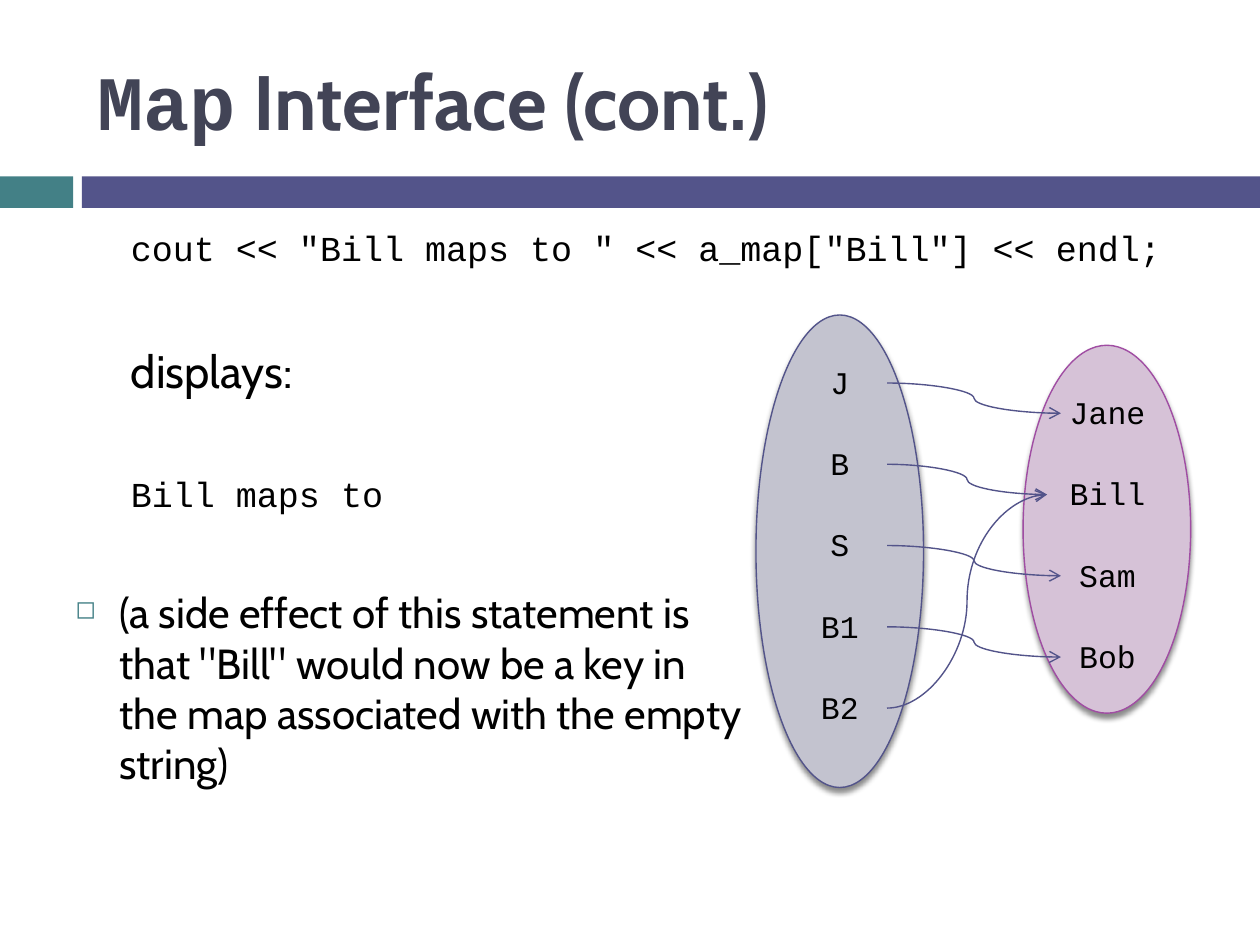
from dataclasses import dataclass

from lxml.etree import SubElement
from pptx import Presentation
from pptx.dml.color import RGBColor
from pptx.enum.shapes import MSO_CONNECTOR, MSO_SHAPE
from pptx.enum.text import MSO_ANCHOR, PP_ALIGN
from pptx.oxml.ns import qn
from pptx.util import Inches, Pt

COLORS = {
    "teal": "438086",
    "indigo": "53548A",
    "title": "424456",
    "text": "000000",
    "key_fill": "C3C3CF",
    "value_fill": "D6C2D7",
    "value_line": "A04DA3",
}
CODE_FONT, PROSE_FONT = "Courier New", "Cabin"
LINE_WIDTH = Pt(0.79)
ROW_STEP = 0.645


@dataclass(frozen=True)
class BodyLine:
    text: str
    font: str
    size: float
    space_before: float
    margin: float = 0.44
    bulleted: bool = False


@dataclass(frozen=True)
class MapSet:
    """An ellipse and the labels listed down its middle."""
    box: tuple[float, float, float, float]
    fill: str
    line: str
    center: float
    first_middle: float
    labels: dict[str, float]  # label: text box width


BODY_LINES = [
    BodyLine('cout << "Bill maps to " << a_map["Bill"] << endl;', CODE_FONT, 20, 5.5),
    BodyLine("displays:", PROSE_FONT, 26, 42.5),
    BodyLine("Bill maps to", CODE_FONT, 20, 42.5),
    BodyLine(
        "(a side effect of this statement is \n"
        'that "Bill" would now be a key in \n'
        "the map associated with the empty \n"
        "string)",
        PROSE_FONT, 24, 41.5, 0.35, True,
    ),
]
KEYS = MapSet((6, 2.5, 1.33, 3.75), "key_fill", "indigo", 6.665, 3.04,
              dict.fromkeys(["J", "B", "S", "B1", "B2"], 0.75))
VALUES = MapSet((8.12, 2.74, 1.33, 2.92), "value_fill", "value_line", 8.79, 3.28,
                {"Jane": 1.04, "Bill": 0.96, "Sam": 0.75, "Bob": 0.75})
# Key, value, and where the arrow starts and ends
ARROWS = [("J", "Jane"), ("B", "Bill"), ("S", "Sam"), ("B1", "Bob"), ("B2", "Bill")]
ARROW_START = 7.04
ARROW_ENDS = {"Jane": 8.42, "Bill": 8.31, "Sam": 8.42, "Bob": 8.42}


def rgb(name: str) -> RGBColor:
    return RGBColor.from_string(COLORS[name])


def style_font(font, name: str, size: float, color: str = "text") -> None:
    font.name, font.size = name, Pt(size)
    font.color.rgb = rgb(color)


def add_filled_shape(shapes, kind, box, fill: str, line: str | None = None):
    shape = shapes.add_shape(kind, *map(Inches, box))
    shape.shadow.inherit = False
    shape.fill.solid()
    shape.fill.fore_color.rgb = rgb(fill)
    if line:
        shape.line.color.rgb = rgb(line)
        shape.line.width = LINE_WIDTH
    else:
        shape.line.fill.background()
    return shape


def add_drop_shadow(shape) -> None:
    effects = shape._element.spPr.find(qn("a:effectLst"))
    shadow = SubElement(effects, qn("a:outerShdw"), blurRad=str(Pt(3)),
                        dist=str(Pt(2.4)), dir="5400000", rotWithShape="0")
    color = SubElement(shadow, qn("a:srgbClr"), val="000000")
    SubElement(color, qn("a:alpha"), val="45000")


def add_title(slide) -> None:
    title = slide.shapes.title
    title.left, title.top, title.width, title.height = map(Inches, (0.67, 0.25, 8.92, 1.08))
    frame = title.text_frame
    frame.vertical_anchor = MSO_ANCHOR.MIDDLE
    paragraph = frame.paragraphs[0]
    paragraph.alignment = PP_ALIGN.LEFT
    for text, font in (("Map", CODE_FONT), (" Interface (cont.)", PROSE_FONT)):
        run = paragraph.add_run()
        run.text = text
        style_font(run.font, font, 44, "title")
        run.font.bold = True


def add_bullet(paragraph, indent: float) -> None:
    properties = paragraph._p.get_or_add_pPr()
    properties.set("indent", str(-Inches(indent)))
    color = SubElement(properties, qn("a:buClr"))
    SubElement(color, qn("a:srgbClr"), val=COLORS["teal"])
    SubElement(properties, qn("a:buSzPct"), val="60000")
    SubElement(properties, qn("a:buChar"), char="◻")


def add_body(slide, lines: list[BodyLine]) -> None:
    frame = slide.shapes.add_textbox(*map(Inches, (0.5, 1.75, 9.33, 5.25))).text_frame
    frame.word_wrap = True
    for index, line in enumerate(lines):
        paragraph = frame.add_paragraph() if index else frame.paragraphs[0]
        paragraph.text = line.text
        paragraph.space_before = Pt(line.space_before)
        style_font(paragraph.font, line.font, line.size)
        paragraph._p.get_or_add_pPr().set("marL", str(Inches(line.margin)))
        if line.bulleted:
            add_bullet(paragraph, line.margin)


def add_map_set(shapes, map_set: MapSet) -> dict[str, float]:
    """Draw the set and return the middle height of each label."""
    ellipse = add_filled_shape(shapes, MSO_SHAPE.OVAL, map_set.box, map_set.fill, map_set.line)
    add_drop_shadow(ellipse)
    middles = {}
    for row, (label, width) in enumerate(map_set.labels.items()):
        middle = map_set.first_middle + row * ROW_STEP
        box = (map_set.center - width / 2, middle - 0.21, width, 0.42)
        frame = shapes.add_textbox(*map(Inches, box)).text_frame
        frame.word_wrap = True
        paragraph = frame.paragraphs[0]
        paragraph.text = label
        paragraph.alignment = PP_ALIGN.CENTER
        style_font(paragraph.font, CODE_FONT, 18)
        middles[label] = middle
    return middles


def add_curved_arrow(slide, start: tuple[float, float], end: tuple[float, float]) -> None:
    arrow = slide.shapes.add_connector(MSO_CONNECTOR.CURVE, *map(Inches, start + end))
    arrow.line.color.rgb = rgb("indigo")
    arrow.line.width = LINE_WIDTH
    SubElement(arrow.line._get_or_add_ln(), qn("a:tailEnd"), type="arrow")
    SubElement(arrow._element.spPr, qn("a:effectLst"))


def main() -> None:
    presentation = Presentation()
    presentation.slide_width, presentation.slide_height = Inches(10), Inches(7.5)
    slide = presentation.slides.add_slide(presentation.slide_layouts[5])

    add_filled_shape(slide.shapes, MSO_SHAPE.RECTANGLE, (0, 1.4, 0.58, 0.25), "teal")
    add_filled_shape(slide.shapes, MSO_SHAPE.RECTANGLE, (0.65, 1.4, 9.35, 0.25), "indigo")
    add_title(slide)
    add_body(slide, BODY_LINES)

    key_middles = add_map_set(slide.shapes, KEYS)
    value_middles = add_map_set(slide.shapes.add_group_shape().shapes, VALUES)
    for key, value in ARROWS:
        add_curved_arrow(slide, (ARROW_START, key_middles[key]),
                         (ARROW_ENDS[value], value_middles[value]))

    presentation.save("out.pptx")


if __name__ == "__main__":
    main()
